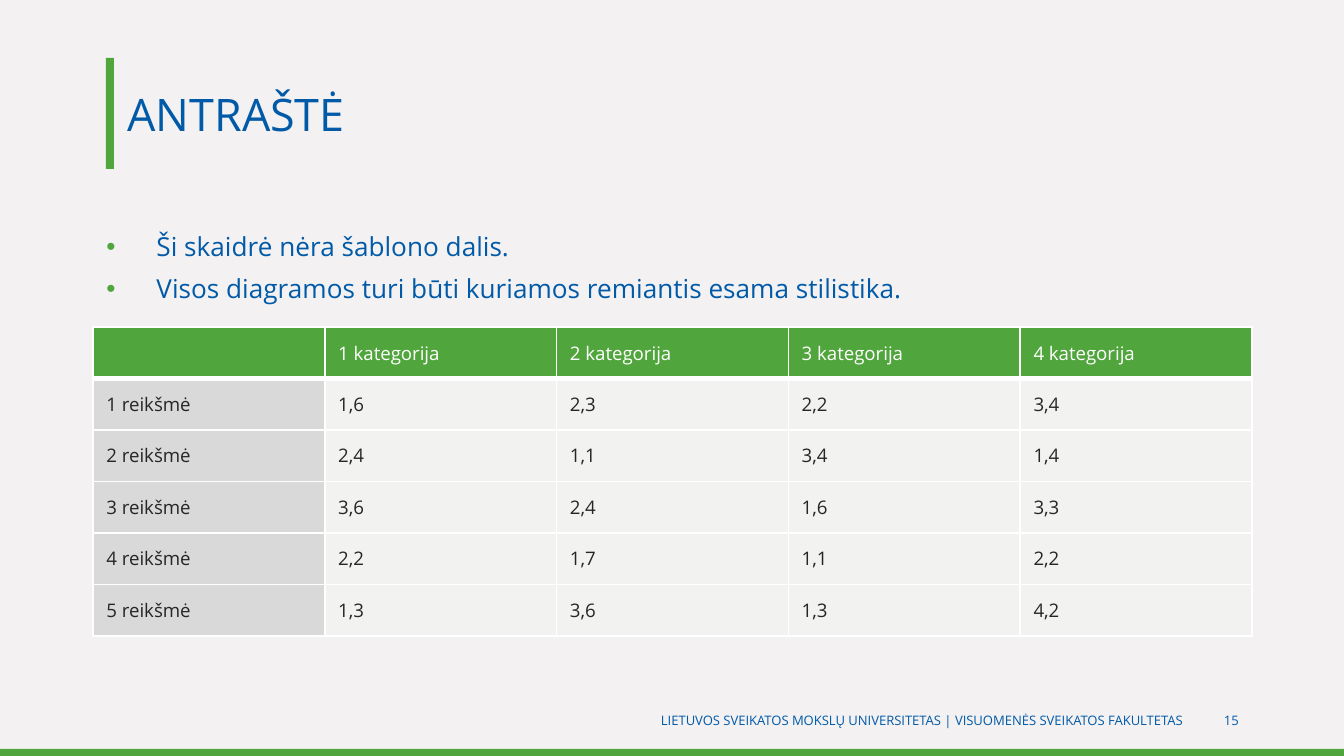
from dataclasses import dataclass

from lxml.etree import SubElement
from pptx import Presentation
from pptx.dml.color import RGBColor
from pptx.enum.shapes import MSO_SHAPE
from pptx.enum.text import MSO_ANCHOR, MSO_AUTO_SIZE, PP_ALIGN
from pptx.oxml.ns import qn
from pptx.util import Emu, Pt


@dataclass(frozen=True)
class Theme:
    font: str = "Open Sans"
    background: str = "F3F1F2"
    green: str = "50A53C"
    blue: str = "015AA7"
    footer_blue: str = "015AA8"
    white: str = "FFFFFF"
    dark: str = "262626"
    label_fill: str = "D9D9D9"
    value_fill: str = "F2F2F1"
    title_size: int = 24
    body_size: int = 14
    table_size: int = 10
    footer_size: int = 7


THEME = Theme()
EMU_PER_PX = 914400 / 134.4
WIDTH, HEIGHT = 1344, 756

TITLE = "ANTRAŠTĖ"
BULLETS = [
    "Ši skaidrė nėra šablono dalis.",
    "Visos diagramos turi būti kuriamos remiantis esama stilistika.",
]
ROWS = [
    ["", "1 kategorija", "2 kategorija", "3 kategorija", "4 kategorija"],
    ["1 reikšmė", "1,6", "2,3", "2,2", "3,4"],
    ["2 reikšmė", "2,4", "1,1", "3,4", "1,4"],
    ["3 reikšmė", "3,6", "2,4", "1,6", "3,3"],
    ["4 reikšmė", "2,2", "1,7", "1,1", "2,2"],
    ["5 reikšmė", "1,3", "3,6", "1,3", "4,2"],
]
FOOTER = "LIETUVOS SVEIKATOS MOKSLŲ UNIVERSITETAS | VISUOMENĖS SVEIKATOS FAKULTETAS"
PAGE_NUMBER = "15"


def px(value):
    return Emu(round(value * EMU_PER_PX))


def place(shape, left, top, width, height):
    shape.left, shape.top = px(left), px(top)
    shape.width, shape.height = px(width), px(height)


def paint(fill, color):
    fill.solid()
    fill.fore_color.rgb = RGBColor.from_string(color)


def style_text(paragraph, size, color, align=PP_ALIGN.LEFT):
    paragraph.alignment = align
    for span in paragraph.runs:
        span.font.name = THEME.font
        span.font.size = Pt(size)
        span.font.bold = False
        span.font.color.rgb = RGBColor.from_string(color)


def prepare_frame(frame, anchor):
    frame.word_wrap = True
    frame.auto_size = MSO_AUTO_SIZE.NONE
    frame.vertical_anchor = anchor


def add_bar(page, left, top, width, height):
    bar = page.shapes.add_shape(
        MSO_SHAPE.RECTANGLE, px(left), px(top), px(width), px(height))
    bar.shadow.inherit = False
    paint(bar.fill, THEME.green)
    bar.line.fill.background()


def fill_title(page):
    title = page.shapes.title
    place(title, 114, 58, 1137, 111)
    title.text_frame.text = TITLE
    prepare_frame(title.text_frame, MSO_ANCHOR.MIDDLE)
    style_text(title.text_frame.paragraphs[0], THEME.title_size, THEME.blue)


def add_bullet(paragraph):
    properties = paragraph._p.get_or_add_pPr()
    properties.set("marL", str(px(50)))
    properties.set("indent", str(-px(50)))
    color = SubElement(properties, qn("a:buClr"))
    SubElement(color, qn("a:srgbClr"), val=THEME.green)
    SubElement(properties, qn("a:buChar"), char="•")


def fill_body(page):
    body = page.placeholders[1]
    place(body, 93, 227, 1160, 91)
    frame = body.text_frame
    frame.text = "\n".join(BULLETS)
    prepare_frame(frame, MSO_ANCHOR.TOP)
    for index, paragraph in enumerate(frame.paragraphs):
        add_bullet(paragraph)
        paragraph.line_spacing = 0.9
        paragraph.space_before = Pt(7.5 if index else 0)
        style_text(paragraph, THEME.body_size, THEME.blue)


def add_footer_text(page, text, left, width):
    box = page.shapes.add_textbox(px(left), px(700), px(width), px(41))
    box.text_frame.text = text
    prepare_frame(box.text_frame, MSO_ANCHOR.MIDDLE)
    style_text(box.text_frame.paragraphs[0], THEME.footer_size,
               THEME.footer_blue, PP_ALIGN.RIGHT)


def set_borders(cell, bottom_width=1, top_width=1):
    properties = cell._tc.get_or_add_tcPr()
    widths = {"a:lnL": 1, "a:lnR": 1, "a:lnT": top_width, "a:lnB": bottom_width}
    for tag, width in widths.items():
        line = SubElement(properties, qn(tag), w=str(Pt(width)))
        fill = SubElement(line, qn("a:solidFill"))
        SubElement(fill, qn("a:srgbClr"), val=THEME.white)


def fill_cell(cell, text, row, column):
    header = row == 0
    set_borders(cell, 3 if header else 1, 3 if row == 1 else 1)
    label_color = THEME.label_fill if column == 0 else THEME.value_fill
    paint(cell.fill, THEME.green if header else label_color)
    cell.vertical_anchor = MSO_ANCHOR.MIDDLE
    cell.text_frame.text = text
    paragraph = cell.text_frame.paragraphs[0]
    style_text(paragraph, THEME.table_size, THEME.white if header else THEME.dark)
    if not text:
        SubElement(paragraph._p, qn("a:endParaRPr"), sz=str(THEME.table_size * 100))


def add_data_table(page):
    width, height = px(1159), px(309)
    table = page.shapes.add_table(
        len(ROWS), len(ROWS[0]), px(93), px(327), width, height).table
    table.horz_banding = False
    for column in table.columns:
        column.width = width // len(ROWS[0])
    for row in table.rows:
        row.height = height // len(ROWS)
    for row, texts in enumerate(ROWS):
        for column, text in enumerate(texts):
            fill_cell(table.cell(row, column), text, row, column)


def main():
    deck = Presentation()
    deck.slide_width, deck.slide_height = px(WIDTH), px(HEIGHT)
    page = deck.slides.add_slide(deck.slide_layouts[1])
    paint(page.background.fill, THEME.background)
    add_bar(page, 0, 749, WIDTH, 7)
    add_bar(page, 106, 58, 8, 111)
    fill_title(page)
    fill_body(page)
    add_data_table(page)
    add_footer_text(page, FOOTER, 226, 970)
    add_footer_text(page, PAGE_NUMBER, 1204, 48)
    deck.save("out.pptx")


if __name__ == "__main__":
    main()
